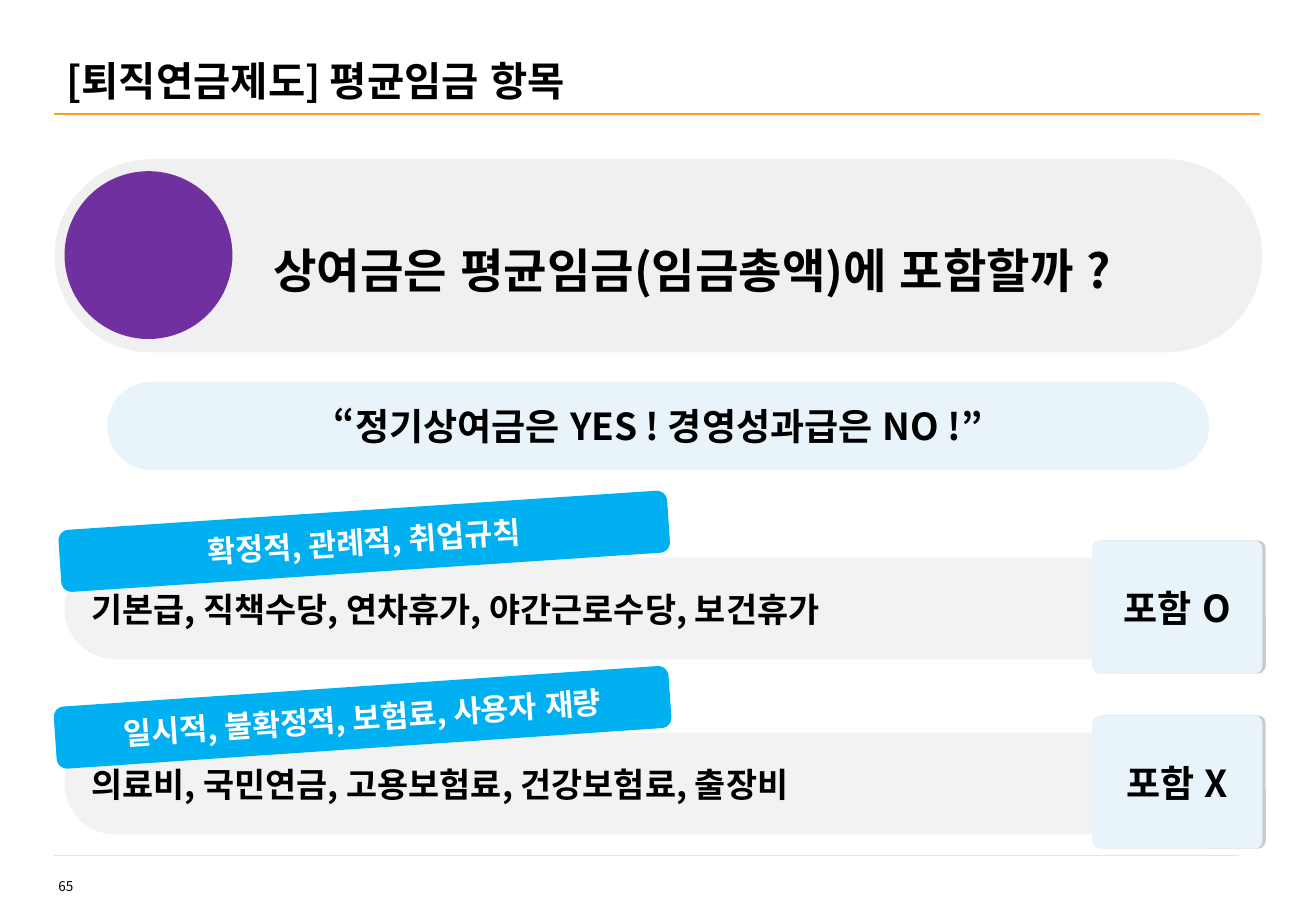
import pptx
import pptx.util
import pptx.dml.color
import pptx.enum.lang
import pptx.enum.shapes
import pptx.enum.text
import pptx.oxml
import pptx.oxml.ns
from lxml import etree

Cm = pptx.util.Cm
Pt = pptx.util.Pt
SHAPE = pptx.enum.shapes.MSO_SHAPE
ALIGN = pptx.enum.text.PP_ALIGN
ANCHOR = pptx.enum.text.MSO_ANCHOR
qn = pptx.oxml.ns.qn

FONT = "Noto Sans CJK KR"
BLACK, WHITE, ORANGE, RULE = "000000", "FFFFFF", "FF9C19", "E3E4E5"
PURPLE, PALE, GREY, BLUE = "7030A0", "E8F4FA", "F2F2F2", "00B0F0"


def rgb(color):
    return pptx.dml.color.RGBColor.from_string(color)


class SlideBuilder:
    """Holds the font and the current slide; lengths are in centimetres."""

    def __init__(self, slide, font):
        self.slide = slide
        self.font = font

    def add_label(self, sp, text, size, color=BLACK, bold=True, align=ALIGN.LEFT,
                  anchor=ANCHOR.MIDDLE, left=0.25, top=0.13, spacing=None):
        tf = sp.text_frame
        tf.word_wrap = True
        tf.vertical_anchor = anchor
        tf.margin_left, tf.margin_top = Cm(left), Cm(top)
        p = tf.paragraphs[0]
        p.alignment = align
        if spacing:
            p.line_spacing = spacing
        r = p.add_run()
        r.text = text
        r.font.name = self.font
        r.font.size = Pt(size)
        r.font.bold = bold
        r.font.color.rgb = rgb(color)
        r.font.language_id = pptx.enum.lang.MSO_LANGUAGE_ID.KOREAN
        east_asian = etree.SubElement(r.font._element, qn("a:ea"))
        east_asian.set("typeface", self.font)

    def text(self, x, y, w, h, text, size, **style):
        sp = self.slide.shapes.add_textbox(Cm(x), Cm(y), Cm(w), Cm(h))
        self.add_label(sp, text, size, anchor=ANCHOR.TOP, **style)

    def shape(self, kind, x, y, w, h, fill, radius=None, rotation=0):
        sp = self.slide.shapes.add_shape(kind, Cm(x), Cm(y), Cm(w), Cm(h))
        sp.shadow.inherit = False
        sp.fill.solid()
        sp.fill.fore_color.rgb = rgb(fill)
        sp.line.fill.background()
        sp.rotation = rotation
        if radius is not None:
            sp.adjustments[0] = radius
        return sp

    def line(self, x1, x2, y, color, width):
        line = self.slide.shapes.add_connector(
            pptx.enum.shapes.MSO_CONNECTOR.STRAIGHT, Cm(x1), Cm(y), Cm(x2), Cm(y))
        line.line.color.rgb = rgb(color)
        line.line.width = Pt(width)
        etree.SubElement(line._element.spPr, qn("a:effectLst"))

    def set_alpha(self, sp, percent):
        color = sp._element.spPr.find(".//" + qn("a:srgbClr"))
        etree.SubElement(color, qn("a:alpha")).set("val", str(percent * 1000))

    def side_shadow(self, sp):
        """Cast a hard, faint shadow to the right."""
        effects = sp._element.spPr.find(qn("a:effectLst"))
        shadow = etree.SubElement(effects, qn("a:outerShdw"), blurRad="0",
                                  dist=str(Pt(2)), dir="0", algn="l", rotWithShape="0")
        color = etree.SubElement(shadow, qn("a:srgbClr"), val=BLACK)
        etree.SubElement(color, qn("a:alpha"), val="20000")


def main():
    prs = pptx.Presentation()
    prs.slide_width, prs.slide_height = Cm(27.51), Cm(19.05)
    s = SlideBuilder(prs.slides.add_slide(prs.slide_layouts[6]), FONT)
    rounded = SHAPE.ROUNDED_RECTANGLE

    s.line(1.14, 26.34, 2.39, ORANGE, 1.25)
    s.text(0.97, 18.24, 11.07, 0.76, "65", 8, bold=False)
    s.line(1.14, 25.91, 17.88, RULE, 0.25)
    s.text(1.14, 1.17, 25.25, 1.14, "[퇴직연금제도] 평균임금 항목", 24, top=0)

    question = s.shape(rounded, 1.14, 3.33, 25.25, 4.04, BLACK, 0.5)
    s.set_alpha(question, 6)
    s.add_label(question, "상여금은 평균임금(임금총액)에 포함할까 ?", 28,
                align=ALIGN.CENTER, left=1.67, top=0.47, spacing=1.2)
    s.shape(SHAPE.OVAL, 1.35, 3.58, 3.51, 3.51, PURPLE)

    answer = s.shape(rounded, 2.24, 7.98, 23.04, 1.85, PALE, 0.5)
    s.add_label(answer, "“정기상여금은 YES ! 경영성과급은 NO !”", 22, align=ALIGN.CENTER)

    rows = [
        ("기본급, 직책수당, 연차휴가, 야간근로수당, 보건휴가", "포함 O",
         "확정적, 관례적, 취업규칙", (1.24, 10.67, 12.75), 356.2),
        ("의료비, 국민연금, 고용보험료, 건강보험료, 출장비", "포함 X",
         "일시적, 불확정적, 보험료, 사용자 재량", (1.14, 14.35, 12.88), 356.1),
    ]
    for i, (items, verdict, reason, (x, y, w), angle) in enumerate(rows):
        offset = i * 3.66
        bar = s.shape(rounded, 1.35, 11.66 + offset, 23.95, 2.13, GREY, 0.5)
        s.add_label(bar, items, 20)
        card = s.shape(rounded, 22.83, 11.3 + offset, 3.56, 2.79, PALE, 0.06)
        s.side_shadow(card)
        s.add_label(card, verdict, 22, align=ALIGN.CENTER)
        tag = s.shape(rounded, x, y, w, 1.3, BLUE, rotation=angle)
        s.add_label(tag, reason, 18, WHITE, align=ALIGN.CENTER)

    prs.save("out.pptx")


if __name__ == "__main__":
    main()
